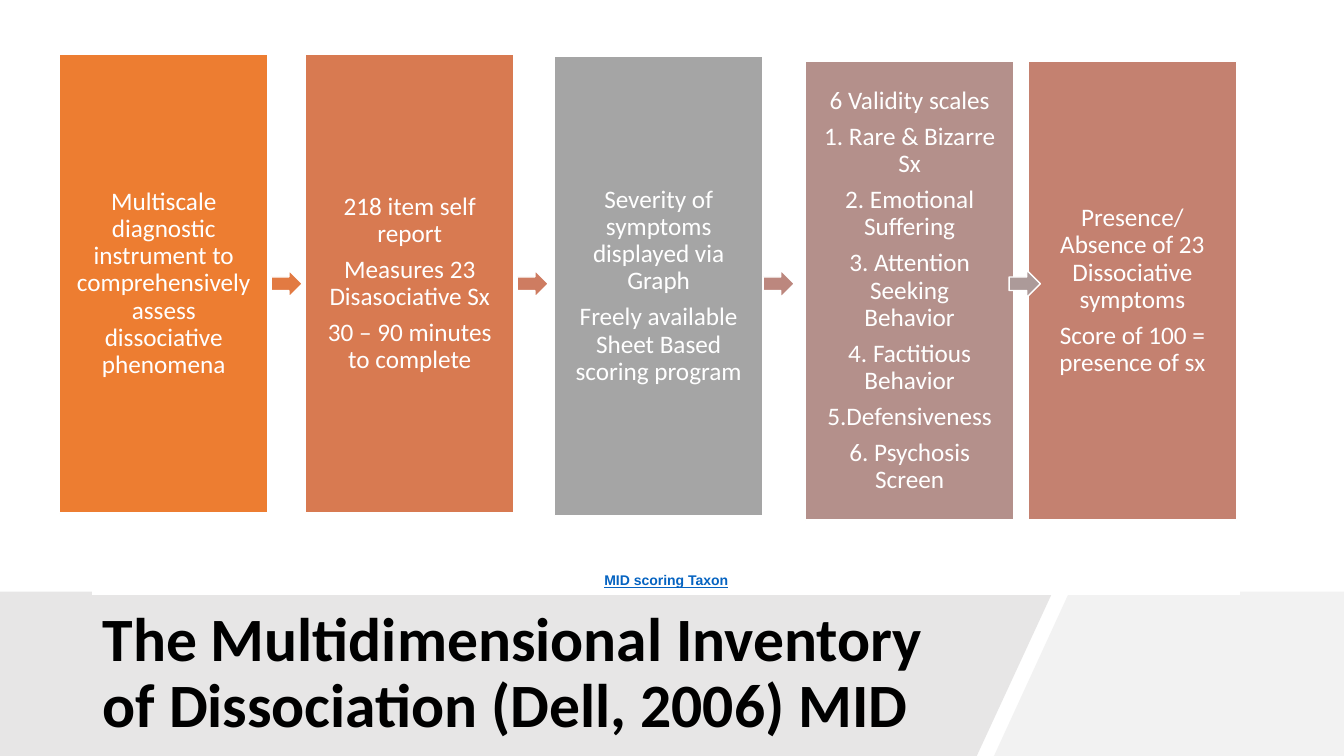
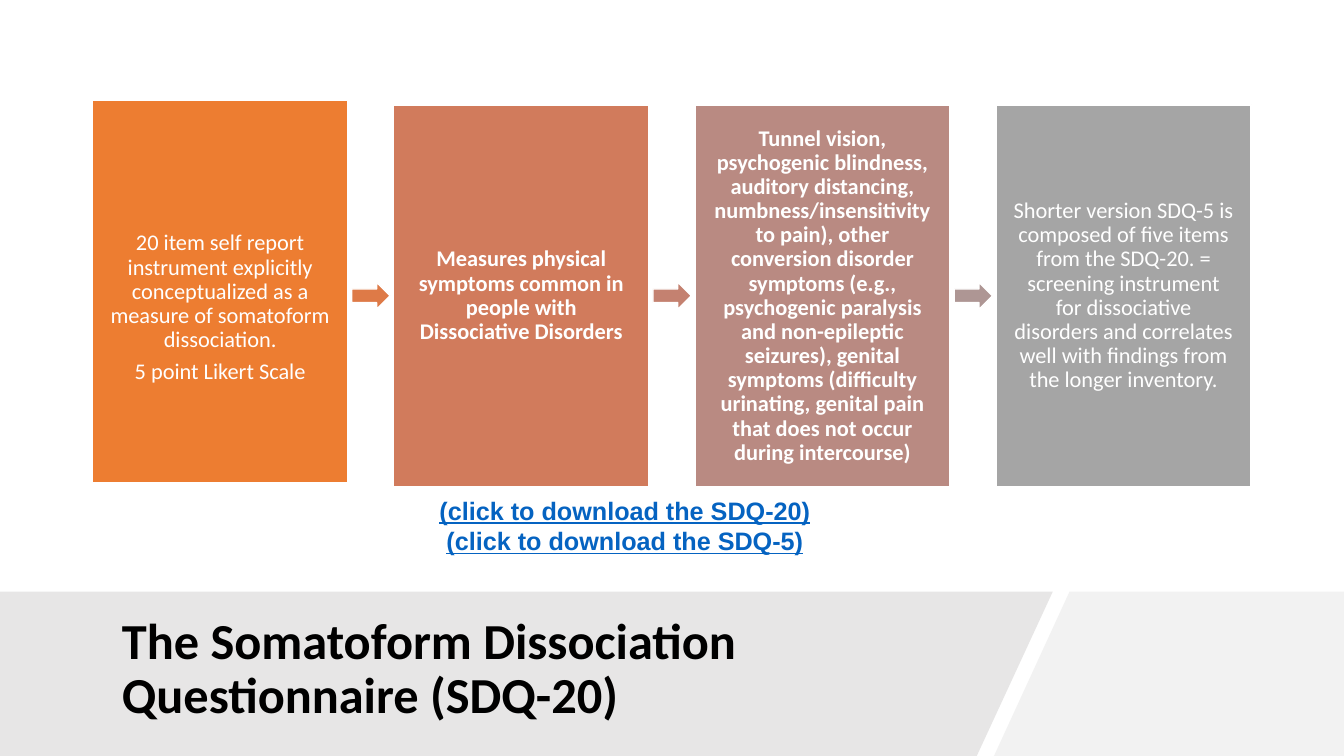
from dataclasses import dataclass

from pptx import Presentation
from pptx.dml.color import RGBColor
from pptx.enum import shapes, text
from pptx.util import Pt


@dataclass(frozen=True)
class Theme:
    left_band: str = "E7E6E6"
    right_band: str = "F2F2F2"
    white: str = "FFFFFF"
    black: str = "000000"
    link: str = "0563C1"
    body_font: str = "Calibri"
    link_font: str = "Arial"
    link_size: int = 18
    small_link_size: int = 10


theme = Theme()
WIDTH, HEIGHT = 960, 540
BAND_TOP = 422.6
BANDS = [
    (theme.right_band, [(764, BAND_TOP), (WIDTH, BAND_TOP), (WIDTH, HEIGHT), (710, HEIGHT)]),
    (theme.left_band, [(0, BAND_TOP), (752, BAND_TOP), (697.7, HEIGHT), (0, HEIGHT)]),
]

# Each step: left, top, fill, bold, extra space above the text, paragraphs
slides = [
    dict(
        title="The Multidimensional Inventory of Dissociation (Dell, 2006) MID",
        title_at=(66.2, 438.5), title_size=44,
        step_size=(149, 327.6), text_size=18,
        steps=[
            (42.5, 38.9, "ED7D31", False, 0,
             ["Multiscale diagnostic instrument to comprehensively assess dissociative phenomena"]),
            (218.2, 38.9, "D87A51", False, 0,
             ["218 item self report", "Measures 23 Disasociative Sx",
              "30 – 90 minutes to complete"]),
            (396, 40.5, "A5A5A5", False, 0,
             ["Severity of symptoms displayed via Graph",
              "Freely available Sheet Based scoring program"]),
            (575.3, 44, "B4908B", False, 0,
             ["6 Validity scales", "1. Rare & Bizarre Sx", "2. Emotional Suffering",
              "3. Attention Seeking Behavior", "4. Factitious Behavior",
              "5.Defensiveness", "6. Psychosis Screen"]),
            (734.4, 44, "C48170", False, 0,
             ["Presence/ Absence of 23 Dissociative symptoms",
              "Score of 100 = presence of sx"]),
        ],
        arrow_at=(193.7, 193), arrow_pitch=175.7, arrow_width=22.3,
        arrow_fills=["E27A42", "CE7C61", "BC877E", "AC9A99"],
    ),
    dict(
        title="The Somatoform Dissociation Questionnaire (SDQ-20)",
        title_at=(80, 435.6), title_size=36,
        step_size=(182.2, 272.9), text_size=16,
        steps=[
            (66.2, 72, "ED7D31", False, 23,
             ["20 item self report instrument explicitly conceptualized as a measure of "
              "somatoform dissociation.", "5 point Likert Scale"]),
            (281.3, 74.9, "D17B5C", True, 0,
             ["Measures physical symptoms common in people with Dissociative Disorders"]),
            (496.4, 74.9, "B98A82", True, 0,
             ["Tunnel vision, psychogenic blindness, auditory distancing, "
              "numbness/insensitivity to pain), other conversion disorder symptoms (e.g., "
              "psychogenic paralysis and non-epileptic seizures), genital symptoms "
              "(difficulty urinating, genital pain that does not occur during intercourse)"]),
            (711.5, 74.9, "A5A5A5", False, 0,
             ["Shorter version SDQ-5 is composed of five items from the SDQ-20. = screening "
              "instrument for dissociative disorders and correlates well with findings from "
              "the longer inventory."]),
        ],
        arrow_at=(251.3, 201.6), arrow_pitch=215.1, arrow_width=27.4,
        arrow_fills=["DE7A47", "C48170", "AE9694"],
    ),
]


def write(frame, paragraphs, *, size, color, font=theme.body_font, bold=False,
          underline=False, align=text.PP_ALIGN.CENTER, spacing=1.0, after=0,
          anchor=text.MSO_ANCHOR.MIDDLE):
    frame.word_wrap = True
    frame.vertical_anchor = anchor
    for index, wording in enumerate(paragraphs):
        paragraph = frame.add_paragraph() if index else frame.paragraphs[0]
        paragraph.alignment = align
        paragraph.line_spacing = spacing
        paragraph.space_after = Pt(after)
        run = paragraph.add_run()
        run.text = wording
        run.font.name = font
        run.font.size = Pt(size)
        run.font.bold = bold
        run.font.underline = underline
        run.font.color.rgb = RGBColor.from_string(color)


def paint(shape, fill, outline=None):
    shape.shadow.inherit = False
    shape.fill.solid()
    shape.fill.fore_color.rgb = RGBColor.from_string(fill)
    if outline:
        shape.line.color.rgb = RGBColor.from_string(outline)
        shape.line.width = Pt(1)
    else:
        shape.line.fill.background()


deck = Presentation()
deck.slide_width, deck.slide_height = Pt(WIDTH), Pt(HEIGHT)
built = []

for content in slides:
    slide = deck.slides.add_slide(deck.slide_layouts[6])
    built.append(slide)

    for fill, corners in BANDS:
        start, *others = [(Pt(x), Pt(y)) for x, y in corners]
        outline = slide.shapes.build_freeform(*start)
        outline.add_line_segments(others)
        paint(outline.convert_to_shape(), fill)

    left, top = content["title_at"]
    title = slide.shapes.add_textbox(Pt(left), Pt(top), Pt(635.8), Pt(86.4))
    write(title.text_frame, [content["title"]], size=content["title_size"],
          color=theme.black, bold=True, align=text.PP_ALIGN.LEFT, spacing=0.9)

    width, height = content["step_size"]
    for left, top, fill, bold, extra, paragraphs in content["steps"]:
        step = slide.shapes.add_shape(shapes.MSO_SHAPE.RECTANGLE,
                                      Pt(left), Pt(top), Pt(width), Pt(height))
        paint(step, fill, theme.white)
        frame = step.text_frame
        frame.margin_left = frame.margin_right = frame.margin_bottom = Pt(12)
        frame.margin_top = Pt(12 + extra)
        write(frame, paragraphs, size=content["text_size"], color=theme.white, bold=bold,
              spacing=0.9, after=0.35 * content["text_size"])

    left, top = content["arrow_at"]
    for index, fill in enumerate(content["arrow_fills"]):
        arrow = slide.shapes.add_shape(
            shapes.MSO_SHAPE.RIGHT_ARROW, Pt(left + index * content["arrow_pitch"]), Pt(top),
            Pt(content["arrow_width"]), Pt(19.4))
        paint(arrow, fill, theme.white)

inventory, questionnaire = built

scoring = inventory.shapes.add_table(2, 1, Pt(66.2), Pt(387.4), Pt(819.4), Pt(37)).table
scoring.first_row = scoring.horz_banding = False
for row in scoring.rows:
    row.height = Pt(18.5)
    cell = row.cells[0]
    cell.margin_top = cell.margin_bottom = Pt(2)
    cell.fill.solid()
    cell.fill.fore_color.rgb = RGBColor.from_string(theme.white)
# The empty row keeps its height only if its end mark is small
spacer = scoring.cell(0, 0).text_frame.paragraphs[0]
spacer._p.get_or_add_endParaRPr().set("sz", str(theme.small_link_size * 100))
scoring_cell = scoring.cell(1, 0)
write(scoring_cell.text_frame, ["MID scoring Taxon"], size=theme.small_link_size,
      color=theme.link, font=theme.link_font, bold=True, underline=True)
scoring_cell.vertical_anchor = text.MSO_ANCHOR.MIDDLE

downloads = questionnaire.shapes.add_textbox(Pt(36.7), Pt(350), Pt(819.4), Pt(51))
write(downloads.text_frame,
      ["(click to download the SDQ-20)", "(click to download the SDQ-5)"],
      size=theme.link_size, color=theme.link, font=theme.link_font, bold=True,
      underline=True, anchor=text.MSO_ANCHOR.TOP)

deck.save("out.pptx")
